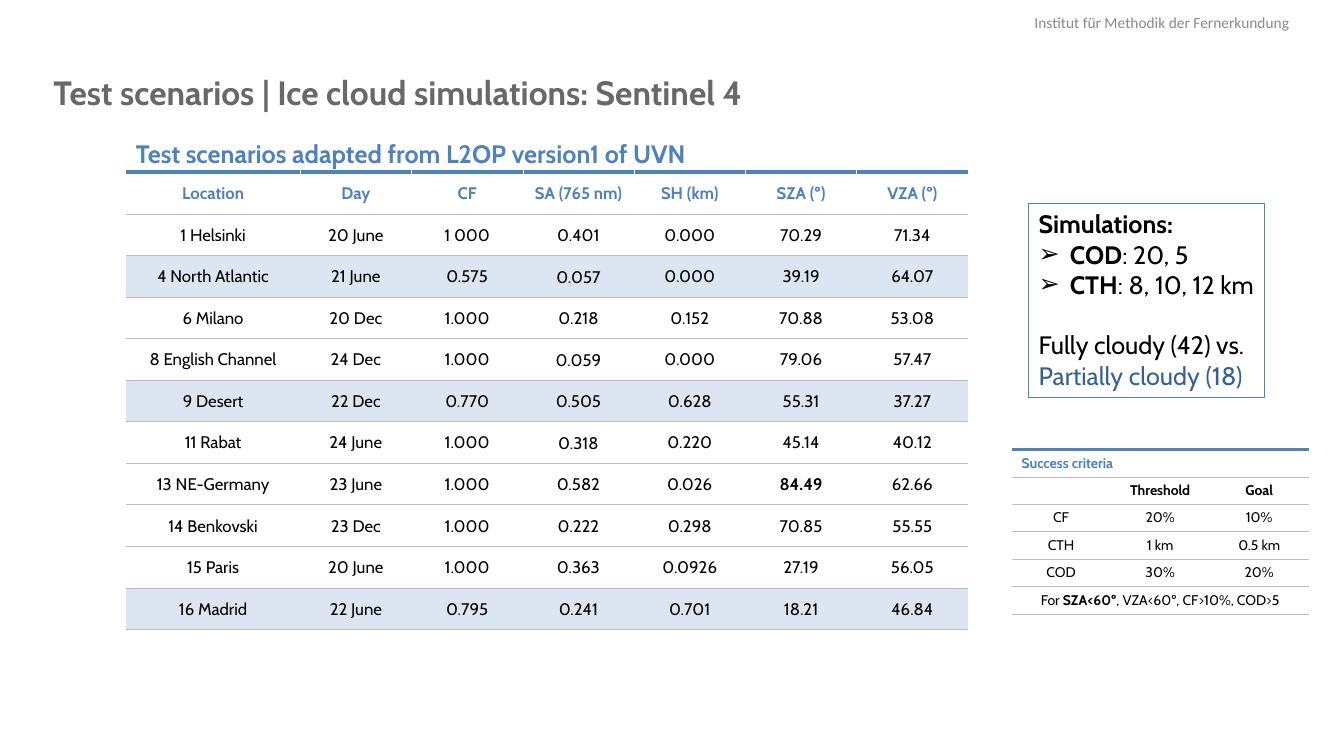
from lxml import etree
from pptx import Presentation
from pptx.dml.color import RGBColor
from pptx.enum.text import MSO_ANCHOR, MSO_AUTO_SIZE, PP_ALIGN
from pptx.oxml.ns import qn
from pptx.util import Inches, Pt

LEFT, MID, RIGHT = PP_ALIGN.LEFT, PP_ALIGN.CENTER, PP_ALIGN.RIGHT
TOP, CENTER = MSO_ANCHOR.TOP, MSO_ANCHOR.MIDDLE
NO_FIT, GROW = MSO_AUTO_SIZE.NONE, MSO_AUTO_SIZE.SHAPE_TO_FIT_TEXT
PLAIN = "{2D5ABB26-0587-4C30-8999-92F81FD0307C}"
THEME = {
    "black": "000000", "blue": "4F81BD", "navy": "376092", "pale": "DCE6F2",
    "gray": "686868", "light": "898989", "rule": "BBBCBC", "white": "FFFFFF",
    "title": 24, "large": 18, "cell": 12, "top": 11, "small": 10,
    "font": "Cabin", "plain": "Calibri", "mark": "Arial",
}


def put(par, text, size, color="black", align=LEFT, font="font"):
    par.alignment = align
    for i, part in enumerate(text.split("*")):
        if part:
            run = par.add_run()
            run.text = part
            look = {"size": Pt(THEME[size]), "name": THEME[font], "bold": i % 2 == 1}
            for key, val in look.items():
                setattr(run.font, key, val)
            run.font.color.rgb = RGBColor.from_string(THEME[color])
    if not text:
        etree.SubElement(par._p, qn("a:endParaRPr"), sz=str(THEME[size] * 100))


def trim(cell, edges, fill, pad):
    props = cell._tc.get_or_add_tcPr()
    for side in "LRTB":
        color, width = edges.get(side, (None, 0))
        line = etree.SubElement(props, qn("a:ln" + side), w=str(Pt(width)))
        if color:
            solid = etree.SubElement(line, qn("a:solidFill"))
            etree.SubElement(solid, qn("a:srgbClr"), val=THEME[color])
        else:
            etree.SubElement(line, qn("a:noFill"))
    if fill:
        cell.fill.solid()
        cell.fill.fore_color.rgb = RGBColor.from_string(THEME[fill])
    else:
        cell.fill.background()
    cell.vertical_anchor = CENTER
    for side, val in zip(("left", "right", "top", "bottom"), pad):
        setattr(cell, "margin_" + side, Inches(val))


deck = Presentation()
deck.slide_width, deck.slide_height = Inches(13.34), Inches(7.5)
slide = deck.slides.add_slide(deck.slide_layouts[1])
shapes = slide.shapes
title, sims = slide.placeholders
head = shapes.add_textbox(0, 0, 0, 0)
sub = shapes.add_textbox(0, 0, 0, 0)

boxes = [
    (title, (0.53, 0.71, 12.27, 0.81), 0, 0, TOP, NO_FIT, True),
    (head, (9.77, 0.13, 3.03, 0.19), 0, 0, TOP, GROW, True),
    (sub, (1.25, 1.37, 8.36, 0.35), 0.1, 0.05, CENTER, NO_FIT, True),
    (sims, (10.21, 2.02, 2.34, 1.92), 0.1, 0.05, TOP, NO_FIT, False),
]
for box, place, side, edge, anchor, fit, wrap in boxes:
    for key, val in zip(("left", "top", "width", "height"), place):
        setattr(box, key, Inches(val))
    frame = {
        "margin_left": Inches(side), "margin_right": Inches(side),
        "margin_top": Inches(edge), "margin_bottom": Inches(edge),
        "vertical_anchor": anchor, "auto_size": fit, "word_wrap": wrap,
    }
    for key, val in frame.items():
        setattr(box.text_frame, key, val)

put(head.text_frame.paragraphs[0], "Institut für Methodik der Fernerkundung",
    "top", "light", RIGHT, "plain")
put(title.text_frame.paragraphs[0],
    "*Test scenarios | Ice cloud simulations: Sentinel 4*", "title", "gray")
par = sub.text_frame.paragraphs[0]
par.line_spacing = 0.9
put(par, "*Test scenarios adapted from L2OP version1 of UVN*", "large", "blue")

sims.line.color.rgb = RGBColor.from_string(THEME["blue"])
sims.line.width = Pt(0.75)
lines = [
    ("*Simulations:*", "", 0, "black"),
    ("*COD*: 20, 5", "➢", 0, "black"),
    ("*CTH*: 8, 10, 12 km", "➢", 0, "black"),
    ("Fully cloudy (42) vs.", "", 21.6, "black"),
    ("Partially cloudy (18)", "", 0, "navy"),
]
for i, (text, mark, gap, color) in enumerate(lines):
    par = sims.text_frame.add_paragraph() if i else sims.text_frame.paragraphs[0]
    par.space_before = Pt(gap)
    props = par._p.get_or_add_pPr()
    dent = Inches(0.31) if mark else 0
    props.set("marL", str(dent))
    props.set("indent", str(-dent))
    if mark:
        etree.SubElement(props, qn("a:buFont"), typeface=THEME["mark"])
        etree.SubElement(props, qn("a:buChar"), char=mark)
    else:
        etree.SubElement(props, qn("a:buNone"))
    put(par, text, "large", color)

cases = [
    ["*Location*", "*Day*", "*CF*", "*SA (765 nm)*", "*SH (km)*", "*SZA (º)*", "*VZA (º)*"],
    ["1 Helsinki", "20 June", "1 000", "0.401", "0.000", "70.29", "71.34"],
    ["4 North Atlantic", "21 June", "0.575", "0.057", "0.000", "39.19", "64.07"],
    ["6 Milano", "20 Dec", "1.000", "0.218", "0.152", "70.88", "53.08"],
    ["8 English Channel", "24 Dec", "1.000", "0.059", "0.000", "79.06", "57.47"],
    ["9 Desert", "22 Dec", "0.770", "0.505", "0.628", "55.31", "37.27"],
    ["11 Rabat", "24 June", "1.000", "0.318", "0.220", "45.14", "40.12"],
    ["13 NE-Germany", "23 June", "1.000", "0.582", "0.026", "*84.49*", "62.66"],
    ["14 Benkovski", "23 Dec", "1.000", "0.222", "0.298", "70.85", "55.55"],
    ["15 Paris", "20 June", "1.000", "0.363", "0.0926", "27.19", "56.05"],
    ["16 Madrid", "22 June", "0.795", "0.241", "0.701", "18.21", "46.84"],
]
goals = [
    ["*Success criteria*", "", ""],
    ["", "*Threshold*", "*Goal*"],
    ["CF", "20%", "10%"],
    ["CTH", "1 km", "0.5 km"],
    ["COD", "30%", "20%"],
    ["For *SZA<60º*, VZA<60º, CF>10%, COD>5", "", ""],
]
grids = [
    (cases, 1.25, 1.71, [1.73] + [1.105] * 6, 0.41, "cell", (), (2, 5, 10)),
    (goals, 10.04, 4.46, [2.95 / 3] * 3, 1.63 / 6, "small", (0, 5), ()),
]
for data, left, top, widths, high, size, spans, shade in grids:
    table = shapes.add_table(len(data), len(widths), Inches(left), Inches(top),
                             Inches(sum(widths)), Inches(high * len(data))).table
    table.first_row = table.horz_banding = False
    table._tbl.tblPr.find(qn("a:tableStyleId")).text = PLAIN
    for col, wide in zip(table.columns, widths):
        col.width = Inches(wide)
    for r, row in enumerate(data):
        table.rows[r].height = Inches(high)
        if r in spans:
            table.cell(r, 0).merge(table.cell(r, len(widths) - 1))
        for c, text in enumerate(row):
            cell = table.cell(r, c)
            edges = {"T": ("rule", 0.5) if r else ("blue", 3), "B": ("rule", 0.5)}
            par = cell.text_frame.paragraphs[0]
            pad = (0.1, 0.1, 0.05, 0.05)
            if data is cases:
                roomy = r == 0 or c == 3
                pad = (0.1,) * 4 if roomy else (0.01, 0.01, 0.01, 0)
                if roomy:
                    par.line_spacing = 1.06
                if r == 0 and c > 0:
                    edges["L"] = ("white", 0.5)
                if r == 0 and c < len(row) - 1:
                    edges["R"] = ("white", 0.5)
            trim(cell, edges, "pale" if r in shade else None, pad)
            put(par, text, size, "black" if r else "blue",
                LEFT if data is goals and r == 0 else MID)

deck.save("out.pptx")
